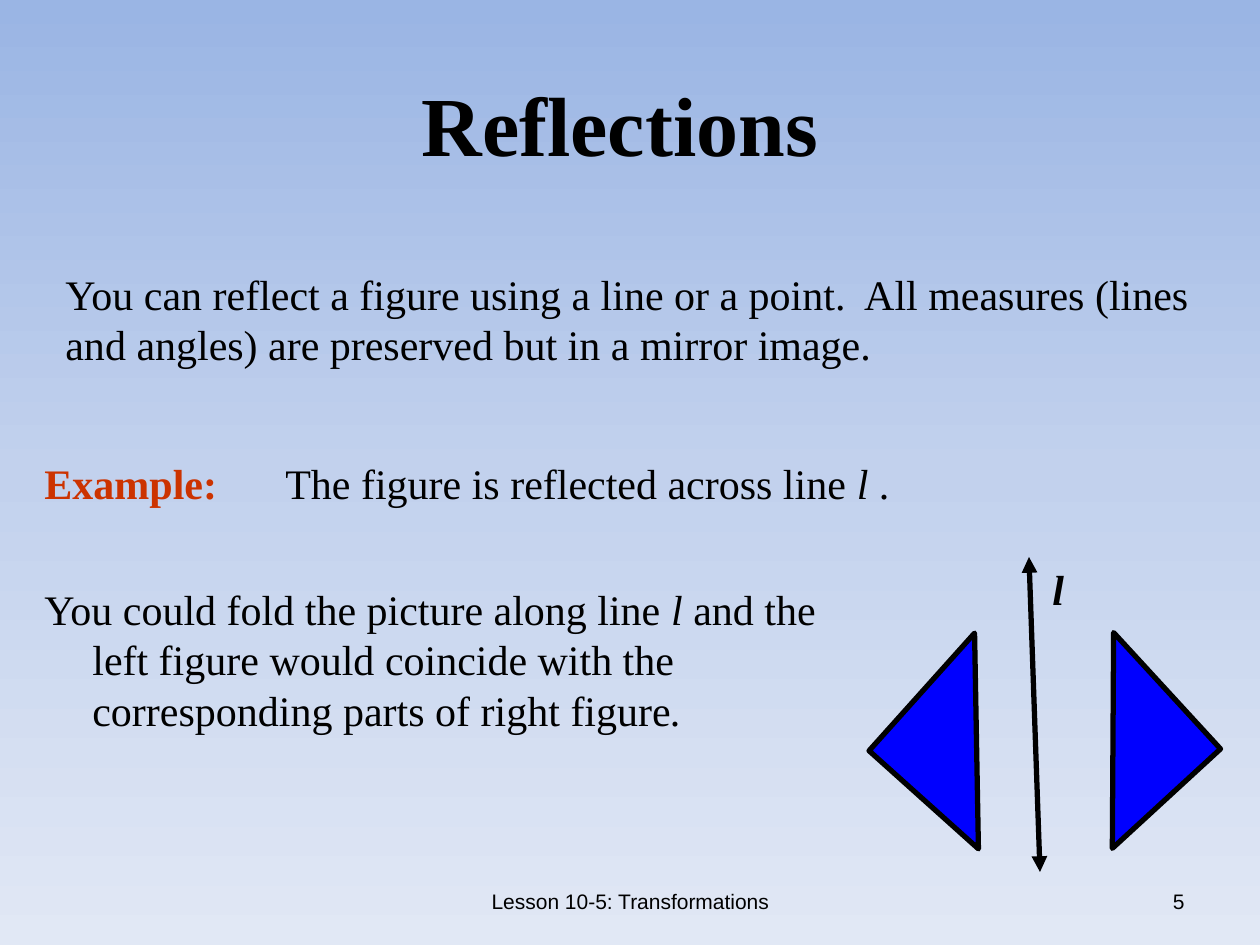
"""Build the Reflections slide with its mirrored triangles and line l."""
import pptx
import pptx.dml.color
import pptx.enum.shapes
import pptx.enum.text
import pptx.oxml
import pptx.oxml.ns
import pptx.util

ALIGN = pptx.enum.text.PP_ALIGN
ANCHOR = pptx.enum.text.MSO_ANCHOR
SHAPE = pptx.enum.shapes.MSO_SHAPE
PX = 914400 / 126

THEME = {
    "serif": "Times New Roman",
    "sans": "Arial",
    "black": "000000",
    "accent": "CC3300",
    "triangle": "0000FF",
    "background": [(0, "9AB5E4"), (50, "C2D1ED"), (100, "E1E8F5")],
    "title": 48,
    "body": 24,
    "footer": 12,
    "line": 3,
}

FOOTER = {"size": "footer", "font": "sans", "anchor": ANCHOR.MIDDLE}
TEXTS = [
    {"box": (431, 876, 399, 50), "runs": [("Lesson 10-5: Transformations", "")],
     "align": ALIGN.CENTER, **FOOTER},
    {"box": (903, 876, 294, 50), "runs": [("5", "")], "align": ALIGN.RIGHT, **FOOTER},
    {"box": (53, 73, 1134, 116), "runs": [("Reflections", "b")], "size": "title",
     "align": ALIGN.CENTER, "anchor": ANCHOR.MIDDLE, "spacing": 0.85},
    {"box": (32, 577, 809, 273), "indent": 48, "runs": [
        ("You could fold the picture along line ", ""), ("l", "i"),
        (" and the left figure would coincide with the corresponding parts of right figure", ""),
        (".", "i")]},
    {"box": (1040, 557, 63, 63), "runs": [("l", "bi")]},
    {"box": (53, 262, 1166, 113), "runs": [
        ("You can reflect a figure using a line or a point.  All measures "
         "(lines and angles) are preserved but in a mirror image.", "")]},
    {"box": (32, 451, 221, 63), "runs": [("Example:", "b")], "color": "accent"},
    {"box": (273, 451, 630, 63), "runs": [
        ("The figure is reflected across line ", ""), ("l", "i"), (" .", "")]},
]
MIRROR_LINE = (1029, 557, 1040, 872)
TRIANGLES = [((903, 662, 147, 158), 41.9), ((1034, 667, 158, 147), 227.4)]


def px(*values):
    return [pptx.util.Emu(round(v * PX)) for v in values]


def rgb(name):
    return pptx.dml.color.RGBColor.from_string(THEME[name])


def xml(tag, body="", attrs=""):
    ns = pptx.oxml.ns.nsdecls("a", "p")
    return pptx.oxml.parse_xml(f"<{tag} {ns} {attrs}>{body}</{tag}>")


def set_background(s):
    stops = "".join(f'<a:gs pos="{pos * 1000}"><a:srgbClr val="{color}"/></a:gs>'
                    for pos, color in THEME["background"])
    fill = f'<a:gradFill><a:gsLst>{stops}</a:gsLst><a:lin ang="5400000" scaled="0"/></a:gradFill>'
    bg = xml("p:bg", f"<p:bgPr>{fill}<a:effectLst/></p:bgPr>")
    s.element.cSld.insert(0, bg)


def add_text(s, box, runs, size="body", font="serif", color="black",
             align=ALIGN.LEFT, anchor=ANCHOR.TOP, spacing=None, indent=0):
    tf = s.shapes.add_textbox(*px(*box)).text_frame
    tf.word_wrap = True
    tf.vertical_anchor = anchor
    p = tf.paragraphs[0]
    p.alignment = align
    p.line_spacing = spacing
    if indent:
        margin, = px(indent)
        p._p.get_or_add_pPr().set("marL", str(margin))
        p._p.get_or_add_pPr().set("indent", str(-margin))
    for text, style in runs:
        r = p.add_run()
        r.text = text
        r.font.name = THEME[font]
        r.font.size = pptx.util.Pt(THEME[size])
        r.font.color.rgb = rgb(color)
        r.font.bold = "b" in style
        r.font.italic = "i" in style


def style_line(line):
    line.color.rgb = rgb("black")
    line.width = pptx.util.Pt(THEME["line"])


def add_mirror_line(s, ends):
    line = s.shapes.add_connector(pptx.enum.shapes.MSO_CONNECTOR.STRAIGHT, *px(*ends))
    style_line(line.line)
    for end in ("a:headEnd", "a:tailEnd"):
        line.line._get_or_add_ln().append(xml(end, attrs='type="triangle"'))
    line._element.spPr.append(xml("a:effectLst"))


def add_triangle(s, box, rotation):
    sp = s.shapes.add_shape(SHAPE.RIGHT_TRIANGLE, *px(*box))
    sp.rotation = rotation
    sp.shadow.inherit = False
    sp.fill.solid()
    sp.fill.fore_color.rgb = rgb("triangle")
    style_line(sp.line)


def main():
    prs = pptx.Presentation()
    prs.slide_width, prs.slide_height = px(1260, 945)
    s = prs.slides.add_slide(prs.slide_layouts[6])
    set_background(s)
    for text in TEXTS:
        add_text(s, **text)
    add_mirror_line(s, MIRROR_LINE)
    for box, rotation in TRIANGLES:
        add_triangle(s, box, rotation)
    prs.save("out.pptx")


if __name__ == "__main__":
    main()
